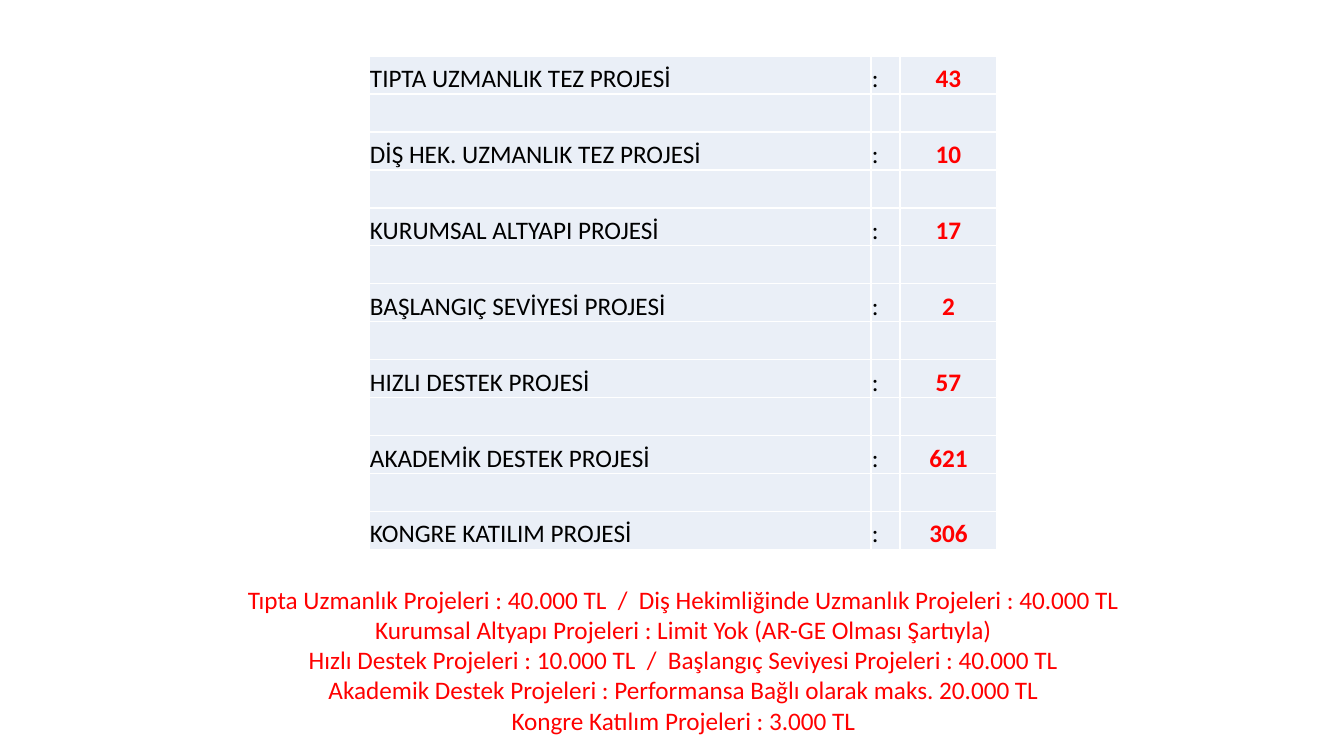
import pptx
import pptx.dml.color
import pptx.enum.text
import pptx.util

PX = 914400 / 100.8
BLACK = pptx.dml.color.RGBColor(0x00, 0x00, 0x00)
RED = pptx.dml.color.RGBColor(0xFF, 0x00, 0x00)
PALE_BLUE = pptx.dml.color.RGBColor(0xEA, 0xEF, 0xF7)
CENTER = pptx.enum.text.PP_ALIGN.CENTER
LEFT = pptx.enum.text.PP_ALIGN.LEFT

PROJECT_COUNTS = [
    ("TIPTA UZMANLIK TEZ PROJESİ", "43"),
    ("DİŞ HEK. UZMANLIK TEZ PROJESİ", "10"),
    ("KURUMSAL ALTYAPI PROJESİ", "17"),
    ("BAŞLANGIÇ SEVİYESİ PROJESİ", "2"),
    ("HIZLI DESTEK PROJESİ", "57"),
    ("AKADEMİK DESTEK PROJESİ", "621"),
    ("KONGRE KATILIM PROJESİ", "306"),
]
BUDGET_LIMITS = [
    "Tıpta Uzmanlık Projeleri : 40.000 TL  /  Diş Hekimliğinde Uzmanlık Projeleri : 40.000 TL",
    "Kurumsal Altyapı Projeleri : Limit Yok (AR-GE Olması Şartıyla)",
    "Hızlı Destek Projeleri : 10.000 TL  /  Başlangıç Seviyesi Projeleri : 40.000 TL",
    "Akademik Destek Projeleri : Performansa Bağlı olarak maks. 20.000 TL",
    "Kongre Katılım Projeleri : 3.000 TL",
]
COLUMN_WIDTHS = [502, 29, 97]
ROW_HEIGHT = 38
ROW_COUNT = 2 * len(PROJECT_COUNTS) - 1


def px(length):
    return pptx.util.Emu(round(length * PX))


def format_paragraph(paragraph, color, alignment, bold=False):
    paragraph.alignment = alignment
    paragraph.font.name = "Calibri"
    paragraph.font.size = pptx.util.Pt(18)
    paragraph.font.bold = bold
    paragraph.font.color.rgb = color


presentation = pptx.Presentation()
presentation.slide_width = px(1344)
presentation.slide_height = px(756)
slide = presentation.slides.add_slide(presentation.slide_layouts[6])

table = slide.shapes.add_table(
    ROW_COUNT, len(COLUMN_WIDTHS), px(369), px(56),
    px(sum(COLUMN_WIDTHS)), px(ROW_HEIGHT * ROW_COUNT),
).table
table.first_row = False
table.horz_banding = False
for column, width in zip(table.columns, COLUMN_WIDTHS):
    column.width = px(width)
for row in table.rows:
    row.height = px(ROW_HEIGHT)

for row_index in range(ROW_COUNT):
    project_index, is_spacer = divmod(row_index, 2)
    name, count = PROJECT_COUNTS[project_index]
    texts = ["", "", ""] if is_spacer else [name, ":", count]
    for column_index, text in enumerate(texts):
        is_count = column_index == 2
        cell = table.cell(row_index, column_index)
        cell.fill.solid()
        cell.fill.fore_color.rgb = PALE_BLUE
        cell.margin_left = cell.margin_right = cell.margin_top = px(1)
        cell.margin_bottom = 0
        cell.vertical_anchor = pptx.enum.text.MSO_ANCHOR.BOTTOM
        cell.text = text
        format_paragraph(
            cell.text_frame.paragraphs[0],
            RED if is_count else BLACK,
            CENTER if is_count else LEFT,
            is_count,
        )

limits_box = slide.shapes.add_textbox(px(110), px(579), px(1147), px(163))
limits_box.text_frame.word_wrap = True
limits_box.text_frame.text = "\n".join(BUDGET_LIMITS)
for paragraph in limits_box.text_frame.paragraphs:
    format_paragraph(paragraph, RED, CENTER)

presentation.save("out.pptx")
